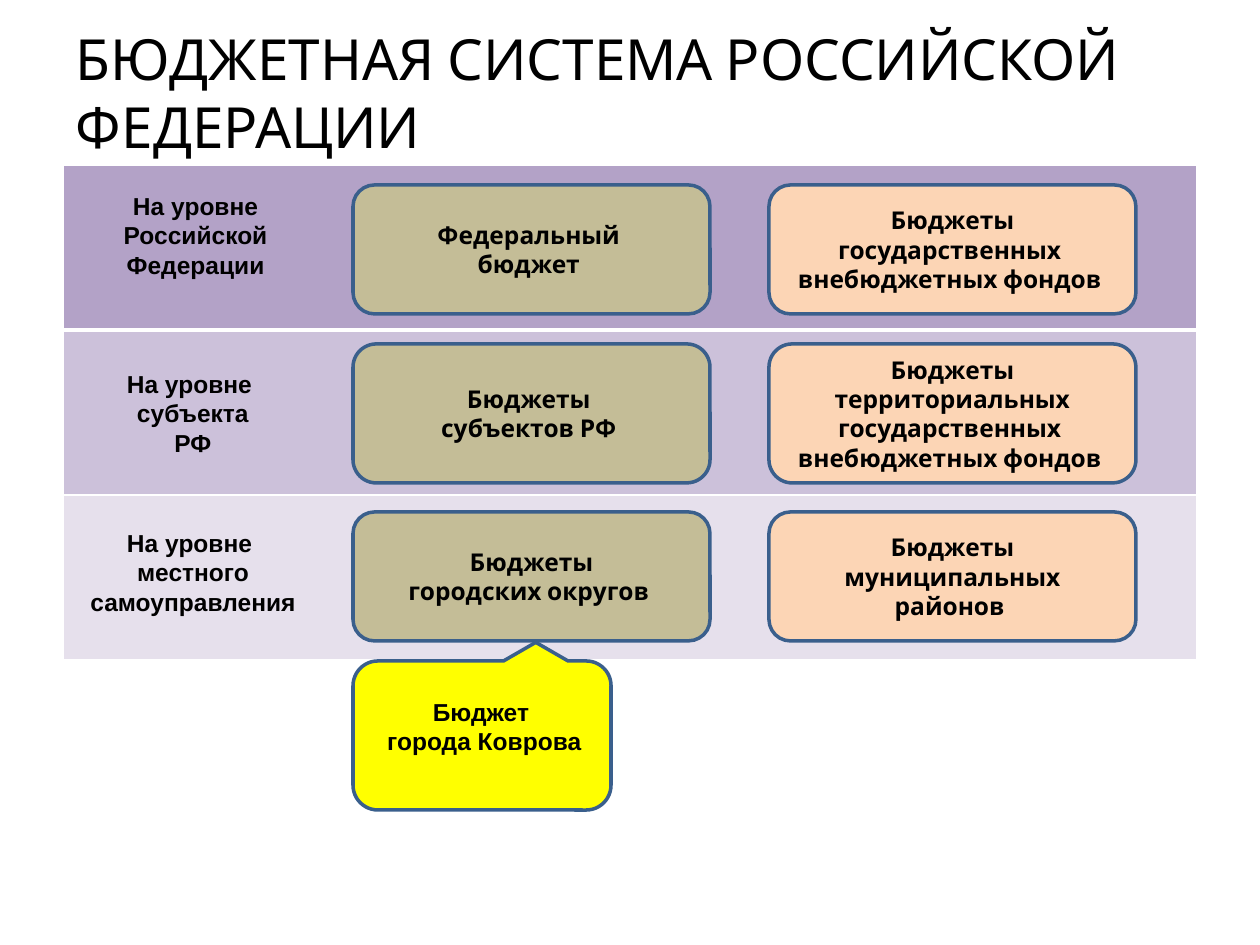
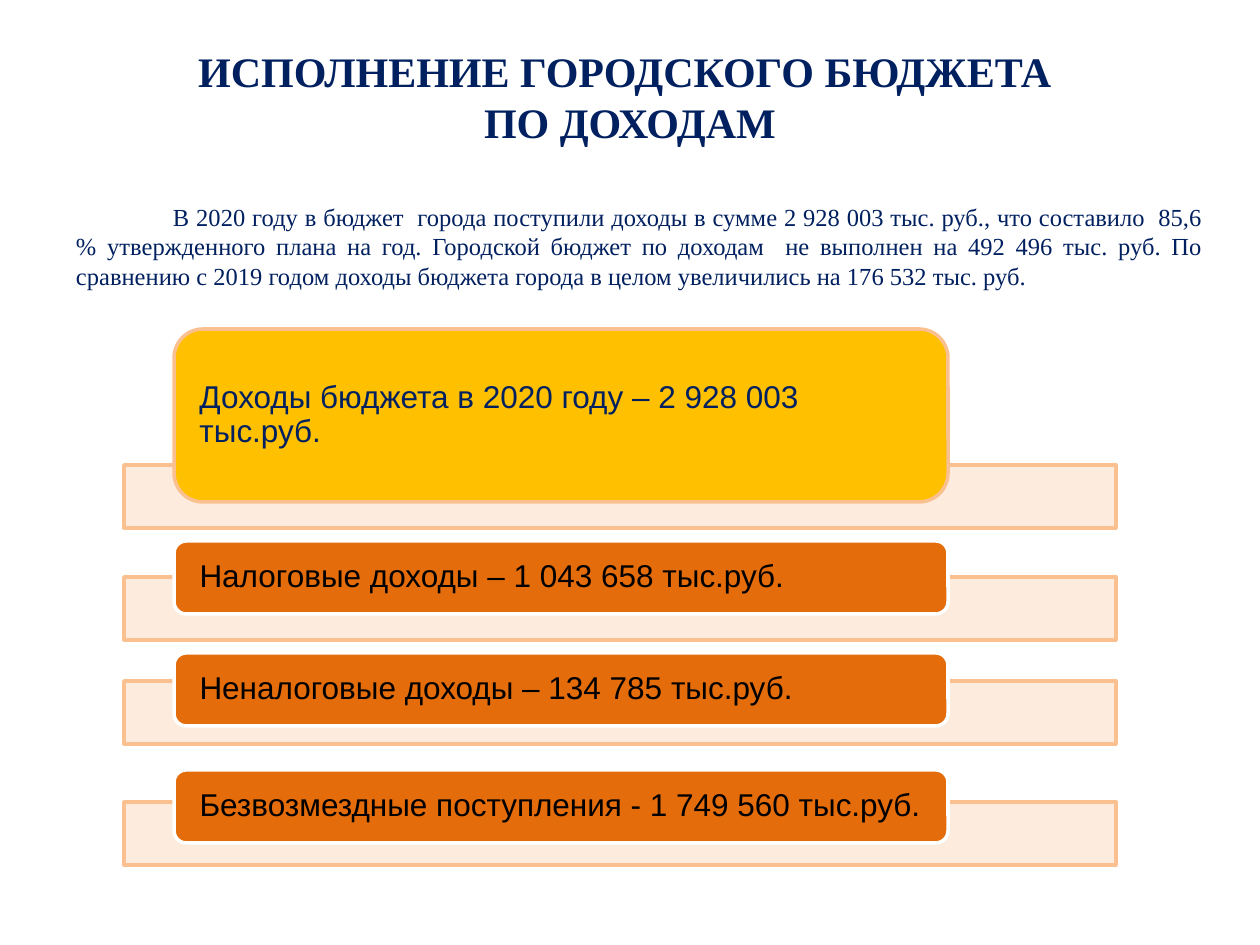
from lxml import etree
from pptx import Presentation
from pptx.dml.color import RGBColor
from pptx.enum.shapes import MSO_SHAPE
from pptx.enum.text import MSO_ANCHOR, PP_ALIGN
from pptx.oxml.ns import qn
from pptx.util import Pt

PX = 914400 // 126  # EMU in one px
ROUND, RECT = MSO_SHAPE.ROUNDED_RECTANGLE, MSO_SHAPE.RECTANGLE
CALLOUT = MSO_SHAPE.ROUNDED_RECTANGULAR_CALLOUT
LEFT, CENTER, JUSTIFY = PP_ALIGN.LEFT, PP_ALIGN.CENTER, PP_ALIGN.JUSTIFY
TOP, MIDDLE = MSO_ANCHOR.TOP, MSO_ANCHOR.MIDDLE

BLACK, WHITE, NAVY = "000000", "FFFFFF", "002060"
STEEL, OLIVE, PEACH, YELLOW = "3A5F8C", "C4BD97", "FCD5B5", "FFFF00"
GOLD, ORANGE, BAR_FILL, BAR_LINE = "FFC000", "E46C0A", "FDEADA", "FAC090"
SANS, SERIF, DISPLAY = "Arial", "Times New Roman", "Cabin"
rgb = RGBColor.from_string


def add_text(s, at, lines, size=14, font=SANS, color=BLACK, bold=False,
             align=CENTER, anchor=TOP, inset=(13, 6), spacing=None, sp=None):
    """Write lines into sp, or into a new text box placed at `at`."""
    if sp is None:
        sp = s.shapes.add_textbox(*[v * PX for v in at])
    tf = sp.text_frame
    tf.word_wrap = True
    tf.vertical_anchor = anchor
    tf.margin_left = tf.margin_right = inset[0] * PX
    tf.margin_top = tf.margin_bottom = inset[1] * PX
    for i, line in enumerate(lines):
        p = tf.add_paragraph() if i else tf.paragraphs[0]
        p.alignment = align
        p.line_spacing = spacing
        r = p.add_run()
        r.text = line
        r.font.size, r.font.name, r.font.bold = Pt(size), font, bold
        r.font.color.rgb = rgb(color)
    return sp


def add_box(s, kind, at, fill, line):
    sp = s.shapes.add_shape(kind, *[v * PX for v in at])
    sp.shadow.inherit = False
    sp.fill.solid()
    sp.fill.fore_color.rgb = rgb(fill)
    sp.line.color.rgb = rgb(line)
    sp.line.width = Pt(2)
    return sp


prs = Presentation()
prs.slide_width, prs.slide_height = 1260 * PX, 945 * PX
blank = prs.slide_layouts[6]

# Slide 1: levels of the budget system
s = prs.slides.add_slide(blank)
add_text(s, (63, 24, 1134, 136), ["БЮДЖЕТНАЯ СИСТЕМА РОССИЙСКОЙ ФЕДЕРАЦИИ"],
         size=32.4, font=DISPLAY, align=LEFT, anchor=MIDDLE, inset=(13, 0))

# Level bands
bands = ["B3A2C7", "CCC1DA", "E6E0EC"]
table = s.shapes.add_table(3, 1, 63 * PX, 165 * PX, 1134 * PX, 495 * PX).table
for i, fill in enumerate(bands):
    table.rows[i].height = 165 * PX
    cell = table.cell(i, 0)
    tcPr = cell._tc.get_or_add_tcPr()
    for side in "LRTB":
        thick = (i, side) in ((0, "B"), (1, "T"))
        ln = etree.SubElement(tcPr, qn("a:ln" + side), w=str(Pt(3 if thick else 1)))
        solid = etree.SubElement(ln, qn("a:solidFill"))
        etree.SubElement(solid, qn("a:srgbClr"), val=WHITE)
    cell.fill.solid()
    cell.fill.fore_color.rgb = rgb(fill)

# Level names
levels = [
    ((64, 185, 270, 102), ["На уровне ", "Российской ", "Федерации "]),
    ((64, 363, 251, 140), ["На уровне", " субъекта", " РФ"]),
    ((64, 522, 258, 102), ["На уровне ", "местного", "самоуправления"]),
]
for at, lines in levels:
    add_text(s, at, lines, bold=True)

# Budgets of each level: top, height, left box, right box
budgets = [
    (185, 129, ["Федеральный ", "бюджет "],
     ["Бюджеты государственных ", "внебюджетных фондов "]),
    (344, 139, ["Бюджеты ", "субъектов РФ "],
     ["Бюджеты территориальных государственных ", "внебюджетных фондов "]),
    (512, 129, ["Бюджеты", "городских округов "],
     ["Бюджеты муниципальных районов "]),
]
for y, h, *pair in budgets:
    for x, w, fill, lines in zip((353, 769), (357, 367), (OLIVE, PEACH), pair):
        sp = add_box(s, ROUND, (x, y, w, h), fill, STEEL)
        add_text(s, None, lines, font=DISPLAY, bold=True, anchor=MIDDLE, sp=sp)

# City callout, pointing up
sp = add_box(s, CALLOUT, (353, 661, 258, 149), YELLOW, STEEL)
sp.rotation = 180
add_text(s, (362, 691, 238, 72), ["Бюджет", " города Коврова"], bold=True)

# Slide 2: budget income
s = prs.slides.add_slide(blank)
add_text(s, (63, 37, 1134, 118), ["ИСПОЛНЕНИЕ ГОРОДСКОГО БЮДЖЕТА ", "ПО ДОХОДАМ"],
         size=24, font=SERIF, color=NAVY, bold=True, anchor=MIDDLE)
sp = add_text(s, (63, 196, 1153, 110), [
    "В 2020 году в бюджет  города поступили доходы в сумме 2 928 003 тыс. руб., "
    "что составило  85,6 % утвержденного плана на год. Городской бюджет по доходам  "
    "не выполнен на 492 496 тыс. руб. По сравнению с 2019 годом доходы бюджета города "
    "в целом увеличились на 176 532 тыс. руб. "],
    font=SERIF, color=NAVY, align=JUSTIFY)
sp.text_frame.paragraphs[0]._p.get_or_add_pPr().set("indent", str(97 * PX))

# Income rows: bar top, label top, label height, fill, line, text colour, text
rows = [
    (465, 329, 173, GOLD, BAR_LINE, NAVY,
     "Доходы бюджета в 2020 году – 2 928 003 тыс.руб."),
    (577, 541, 73, ORANGE, WHITE, BLACK, "Налоговые доходы – 1 043 658 тыс.руб."),
    (681, 653, 73, ORANGE, WHITE, BLACK, "Неналоговые доходы – 134 785 тыс.руб."),
    (802, 770, 73, ORANGE, WHITE, BLACK,
     "Безвозмездные поступления - 1 749 560 тыс.руб."),
]
for bar_y, y, h, fill, line, color, label in rows:
    sp = add_box(s, RECT, (124, bar_y, 992, 63), BAR_FILL, BAR_LINE)
    clr = sp.fill._xPr.find(qn("a:solidFill"))[0]
    etree.SubElement(clr, qn("a:alpha"), val="90000")
    sp = add_box(s, ROUND, (174, y, 774, h), fill, line)
    corner = round(h * 0.05)  # the rounded corner already insets the text
    add_text(s, None, [label], size=18, color=color, align=LEFT, anchor=MIDDLE,
             inset=(26 - corner, 0), spacing=0.9, sp=sp)

prs.save("out.pptx")
